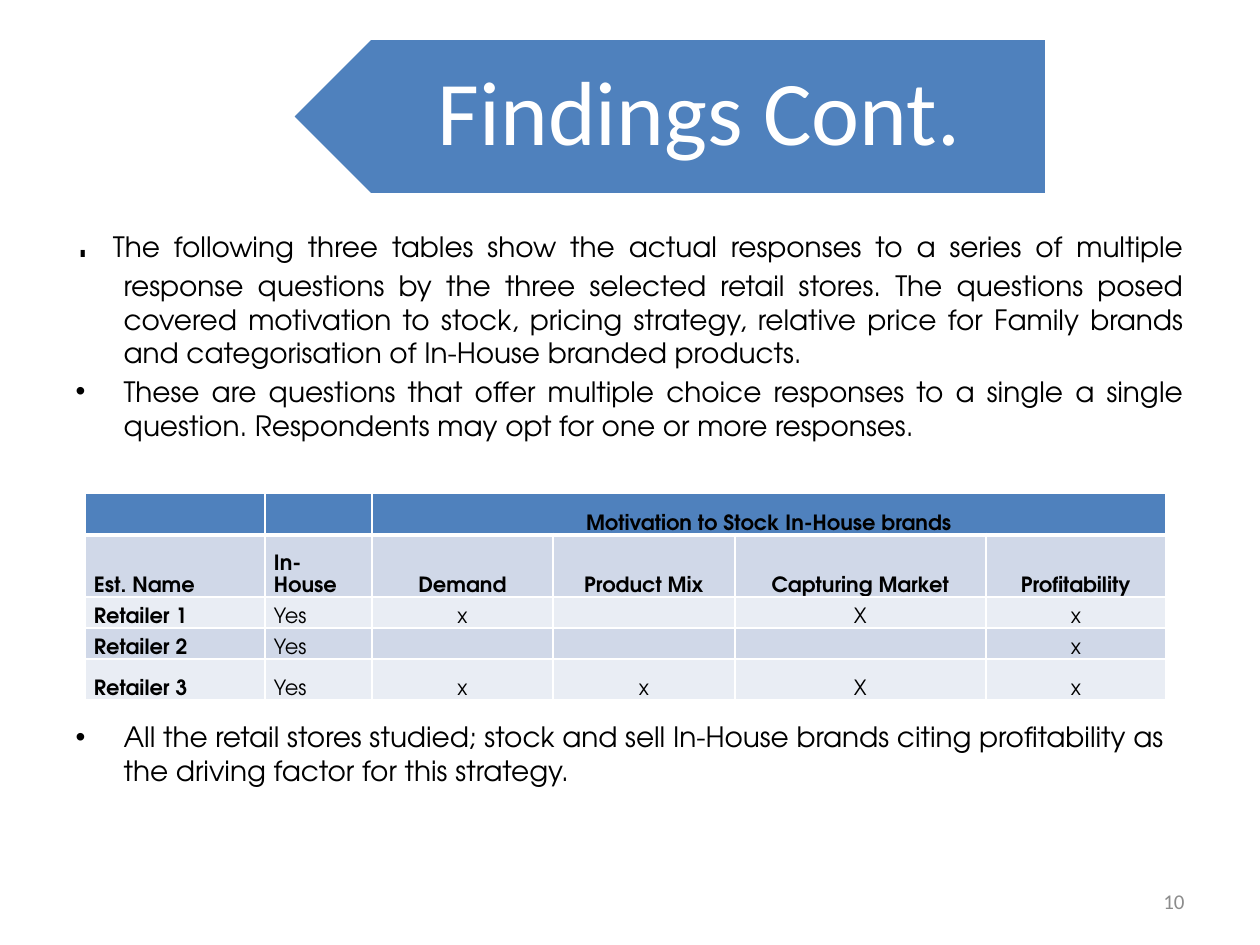
import pptx
import pptx.util
import pptx.dml.color
import pptx.enum.shapes
import pptx.enum.text
import pptx.oxml
import pptx.oxml.ns

PX_PER_INCH = 126
COLOR = pptx.dml.color.RGBColor.from_string
ALIGN = pptx.enum.text.PP_ALIGN
ANCHOR = pptx.enum.text.MSO_ANCHOR

THEME = {
    "blue": "4F81BD", "white": "FFFFFF", "black": "000000", "grey": "8C8C8C",
    "bands": ("D0D8E8", "E9EDF4"),
    "plain font": "Calibri", "text font": "TeX Gyre Adventor",
    "title": 52, "lead": 32, "body": 16, "cell": 12, "number": 12,
}


def px(length):
    return round(length * pptx.util.Inches(1) / PX_PER_INCH)


def set_font(font, name, size, color):
    font.name = THEME[name]
    font.size = pptx.util.Pt(THEME[size])
    font.color.rgb = COLOR(THEME[color])


deck = pptx.Presentation()
deck.slide_width, deck.slide_height = px(1260), px(945)
slide = deck.slides.add_slide(deck.slide_layouts[1])
title, body = slide.placeholders

# Title arrow, placed behind the title text
arrow = slide.shapes.add_shape(
    pptx.enum.shapes.MSO_SHAPE.PENTAGON, px(292), px(38), px(755), px(157))
arrow.rotation = 180
arrow.shadow.inherit = False
arrow.fill.solid()
arrow.fill.fore_color.rgb = COLOR(THEME["blue"])
arrow.line.color.rgb = COLOR(THEME["white"])
arrow.line.width = pptx.util.Pt(2)
title._element.addprevious(arrow._element)

# Title
title.left, title.top, title.width, title.height = px(332), px(38), px(715), px(157)
frame = title.text_frame
frame.text = "Findings Cont."
frame.auto_size = pptx.enum.text.MSO_AUTO_SIZE.NONE
frame.vertical_anchor = ANCHOR.MIDDLE
frame.margin_left, frame.margin_right = px(69), px(50)
frame.margin_top = frame.margin_bottom = px(28)
para = frame.paragraphs[0]
para.alignment = ALIGN.CENTER
para.line_spacing = 0.9
set_font(para.font, "plain font", "title", "white")

# Body: lead dot or bullet, alignment, space before in points, text
POINTS = [
    (". ", ALIGN.JUSTIFY, 0,
     "The following three tables show the actual responses to a series of multiple "
     "response questions by the three selected retail stores. The questions posed "
     "covered motivation to stock, pricing strategy, relative price for Family brands "
     "and categorisation of In-House branded products."),
    (None, ALIGN.JUSTIFY, 3,
     "These are questions that offer multiple choice responses to a single a single "
     "question. Respondents may opt for one or more responses."),
    (None, ALIGN.LEFT, 159,
     "All the retail stores studied; stock and sell In-House brands citing "
     "profitability as the driving factor for this strategy."),
]
body.left, body.top, body.width, body.height = px(63), px(195), px(1134), px(649)
frame = body.text_frame
frame.auto_size = pptx.enum.text.MSO_AUTO_SIZE.NONE
for index, (lead, alignment, space, text) in enumerate(POINTS):
    para = frame.add_paragraph() if index else frame.paragraphs[0]
    para.alignment = alignment
    para.space_before = pptx.util.Pt(space)
    properties = para._p.get_or_add_pPr()
    properties.set("marL", str(px(48)))
    properties.set("indent", str(-px(48)))
    bullet = pptx.oxml.parse_xml(
        f'<a:{"buNone" if lead else "buChar"} {pptx.oxml.ns.nsdecls("a")}/>')
    if not lead:
        bullet.set("char", "•")
    properties.append(bullet)
    set_font(para.font, "text font", "body", "black")
    if lead:
        span = para.add_run()
        span.text = lead
        span.font.size = pptx.util.Pt(THEME["lead"])
    span = para.add_run()
    span.text = text

# Table of responses
ROWS = [
    ["", "", "Motivation to Stock In-House brands", "", "", ""],
    ["Est. Name", "In-House", "Demand", "Product Mix", "Capturing Market", "Profitability"],
    ["Retailer 1", "Yes", "x", "", "X", "x"],
    ["Retailer 2", "Yes", "", "", "", "x"],
    ["Retailer 3", "Yes", "x", "x", "X", "x"],
]
COLUMN_WIDTHS = [180, 107, 181, 182, 251, 180]
ROW_HEIGHTS = [42, 62, 31, 31, 41]
table = slide.shapes.add_table(
    len(ROWS), len(COLUMN_WIDTHS), px(85), px(493),
    px(sum(COLUMN_WIDTHS)), px(sum(ROW_HEIGHTS))).table
for column, width in zip(table.columns, COLUMN_WIDTHS):
    column.width = px(width)
for row, height in zip(table.rows, ROW_HEIGHTS):
    row.height = px(height)
table.cell(0, 2).merge(table.cell(0, 5))

for r, texts in enumerate(ROWS):
    for c, text in enumerate(texts):
        cell = table.cell(r, c)
        cell.vertical_anchor = ANCHOR.BOTTOM
        cell.margin_left = cell.margin_right = px(9)
        cell.margin_top = cell.margin_bottom = 0
        # White rules, thick below the header row
        for side in "LRTB":
            thick = (r, side) in ((0, "B"), (1, "T"))
            cell._tc.get_or_add_tcPr().append(pptx.oxml.parse_xml(
                f'<a:ln{side} {pptx.oxml.ns.nsdecls("a")} w="{pptx.util.Pt(3 if thick else 1)}">'
                f'<a:solidFill><a:srgbClr val="{THEME["white"]}"/></a:solidFill></a:ln{side}>'))
        cell.fill.solid()
        cell.fill.fore_color.rgb = COLOR(THEME["bands"][(r - 1) % 2] if r else THEME["blue"])
        para = cell.text_frame.paragraphs[0]
        para.alignment = ALIGN.CENTER if c >= 2 else ALIGN.LEFT
        para.line_spacing = 1.15
        set_font(para.font, "text font", "cell", "black")
        para.font.bold = r < 2 or c == 0
        if text:
            span = para.add_run()
            span.text = text
            # Header-style defaults are overridden on the run as well
            set_font(span.font, "text font", "cell", "black")
            span.font.bold = para.font.bold

# Slide number
box = slide.shapes.add_textbox(px(903), px(876), px(294), px(50))
box.text_frame.word_wrap = True
box.text_frame.vertical_anchor = ANCHOR.MIDDLE
para = box.text_frame.paragraphs[0]
para.text = "10"
para.alignment = ALIGN.RIGHT
set_font(para.font, "plain font", "number", "grey")

deck.save("out.pptx")
